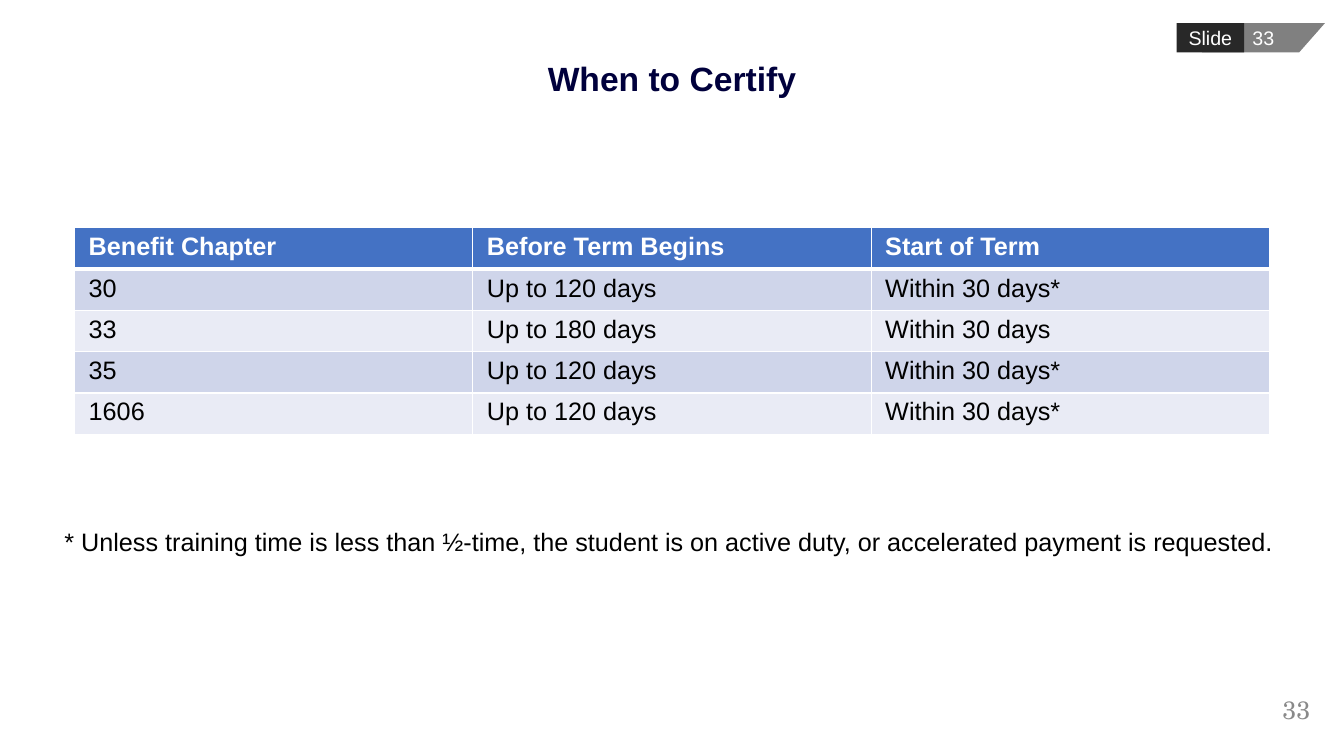
from pptx import Presentation
from pptx.dml.color import RGBColor
from pptx.enum.shapes import MSO_SHAPE as Preset
from pptx.enum.text import MSO_ANCHOR as Anchor, PP_ALIGN as Align
from pptx.oxml.ns import qn
from pptx.util import Inches, Pt
from lxml.etree import SubElement

COLORS = {
    "white": "FFFFFF",
    "black": "000000",
    "navy": "00003C",
    "header": "4472C4",
    "band_dark": "CFD5EA",
    "band_light": "E9EBF5",
    "tag_dark": "282828",
    "tag_gray": "808080",
    "number": "898989",
}

DEADLINES = [
    ("Benefit Chapter", "Before Term Begins", "Start of Term"),
    ("30", "Up to 120 days", "Within 30 days*"),
    ("33", "Up to 180 days", "Within 30 days"),
    ("35", "Up to 120 days", "Within 30 days*"),
    ("1606", "Up to 120 days", "Within 30 days*"),
]


class SlideBuilder:
    font = "Arial"

    def __init__(self, slide):
        self.slide = slide

    def color(self, name):
        return RGBColor.from_string(COLORS[name])

    def add_words(self, frame, words, size, color, bold=False, align=Align.LEFT, font=None):
        paragraph = frame.paragraphs[0]
        paragraph.alignment = align
        run = paragraph.add_run()
        run.text = words
        run.font.name = font or self.font
        run.font.size = Pt(size)
        run.font.bold = bold
        run.font.color.rgb = self.color(color)
        return paragraph

    def text(self, box, words, size, color, anchor=Anchor.TOP, **style):
        frame = self.slide.shapes.add_textbox(*map(Inches, box)).text_frame
        frame.word_wrap = True
        frame.vertical_anchor = anchor
        return self.add_words(frame, words, size, color, **style)

    def tag(self, preset, box, fill, words):
        tag = self.slide.shapes.add_shape(preset, *map(Inches, box))
        tag.shadow.inherit = False
        tag.fill.solid()
        tag.fill.fore_color.rgb = self.color(fill)
        tag.line.fill.background()
        frame = tag.text_frame
        frame.word_wrap = False
        frame.vertical_anchor = Anchor.MIDDLE
        frame.margin_left = frame.margin_right = 0
        frame.margin_top = frame.margin_bottom = 0
        self.add_words(frame, words, 14, "white", align=Align.CENTER)
        return tag

    def border(self, cell, side, width):
        line = SubElement(cell._tc.get_or_add_tcPr(), qn(f"a:ln{side}"), w=str(Pt(width)))
        fill = SubElement(line, qn("a:solidFill"))
        SubElement(fill, qn("a:srgbClr"), val=COLORS["white"])

    def table(self, left, top, column_width, row_height, rows):
        columns = len(rows[0])
        table = self.slide.shapes.add_table(
            len(rows), columns, Inches(left), Inches(top),
            Inches(column_width * columns), Inches(row_height * len(rows))).table
        for column in table.columns:
            column.width = Inches(column_width)
        for r, row in enumerate(rows):
            table.rows[r].height = Inches(row_height)
            is_header = r == 0
            fill = "header" if is_header else ("band_light", "band_dark")[r % 2]
            for c, words in enumerate(row):
                cell = table.cell(r, c)
                cell.margin_left = cell.margin_right = Inches(0.14)
                cell.margin_top = cell.margin_bottom = Inches(0.05)
                widths = {"L": 1, "R": 1, "T": 3 if r == 1 else 1, "B": 3 if is_header else 1}
                for side, width in widths.items():
                    self.border(cell, side, width)
                cell.fill.solid()
                cell.fill.fore_color.rgb = self.color(fill)
                self.add_words(cell.text_frame, words, 18,
                               "white" if is_header else "black", bold=is_header)


def main():
    deck = Presentation()
    deck.slide_width, deck.slide_height = Inches(13.33), Inches(7.5)
    builder = SlideBuilder(deck.slides.add_slide(deck.slide_layouts[6]))

    number_tag = builder.tag(Preset.PARALLELOGRAM, (11.92, 0.23, 1.22, 0.29), "tag_gray", "33")
    number_tag.adjustments[0] = 0.88
    builder.tag(Preset.RECTANGLE, (11.67, 0.23, 0.67, 0.29), "tag_dark", "Slide")

    title = builder.text((0.6, 0.62, 12.13, 0.35), "When to Certify", 24, "navy",
                         anchor=Anchor.MIDDLE, bold=True, align=Align.CENTER)
    title.line_spacing = 0.9

    builder.table(0.74, 2.26, 3.95, 0.41, DEADLINES)
    builder.text((12.62, 6.84, 0.72, 0.4), "33", 18, "number", font="TeX Gyre Schola")
    builder.text((0.54, 5.17, 12.79, 0.4),
                 "* Unless training time is less than ½-time, the student is on active duty, "
                 "or accelerated payment is requested.", 18, "black")

    deck.save("out.pptx")


if __name__ == "__main__":
    main()
